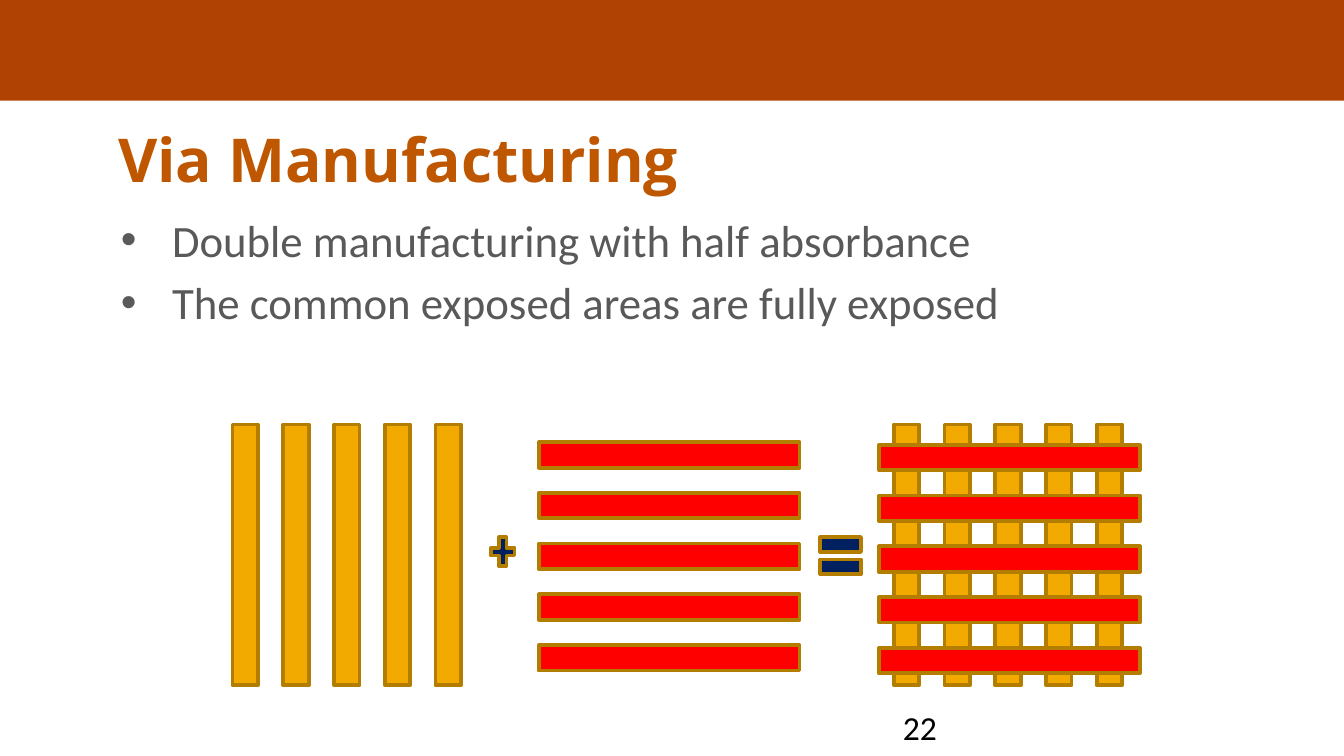
from lxml import etree
from pptx import Presentation
from pptx.dml.color import RGBColor
from pptx.enum.shapes import MSO_SHAPE
from pptx.enum.text import MSO_ANCHOR, MSO_AUTO_SIZE, PP_ALIGN
from pptx.oxml.ns import qn
from pptx.util import Inches, Pt

RECT, PLUS, EQUAL = MSO_SHAPE.RECTANGLE, MSO_SHAPE.MATH_PLUS, MSO_SHAPE.MATH_EQUAL
TOP, LEFT, NO_FIT = MSO_ANCHOR.TOP, PP_ALIGN.LEFT, MSO_AUTO_SIZE.NONE

BURNT_ORANGE, TITLE_ORANGE = "B04304", "BF5700"
GOLD, RED, NAVY, OUTLINE = "F2A900", "FF0000", "002060", "B37D00"
GREY, BULLET_GREY, BLACK = "595959", "595A5B", "000000"

BAR_COUNT, BAR_WIDTH, BAR_LENGTH = 5, 0.19, 1.94
BAR_PITCH = 1.51 / (BAR_COUNT - 1)


def color(hex_string):
    return RGBColor.from_string(hex_string)


def place(shape, left, top, width, height):
    shape.left, shape.top = Inches(left), Inches(top)
    shape.width, shape.height = Inches(width), Inches(height)


def add_bullet(paragraph, indent):
    properties = paragraph._p.get_or_add_pPr()
    properties.set("marL", str(Inches(indent)))
    properties.set("indent", str(-Inches(indent)))
    bullet_color = etree.SubElement(properties, qn("a:buClr"))
    etree.SubElement(bullet_color, qn("a:srgbClr"), val=BULLET_GREY)
    etree.SubElement(properties, qn("a:buFont"), typeface="Arial")
    etree.SubElement(properties, qn("a:buChar"), char="•")


def write_text(shape, *lines, font, size, fill, bold=False, inset=0.05,
               bullet_indent=None, gap=0):
    frame = shape.text_frame
    frame.word_wrap = True
    frame.auto_size = NO_FIT
    frame.vertical_anchor = TOP
    frame.margin_top = Inches(inset)
    for index, line in enumerate(lines):
        paragraph = frame.add_paragraph() if index else frame.paragraphs[0]
        if bullet_indent:
            add_bullet(paragraph, bullet_indent)
        paragraph.alignment = LEFT
        paragraph.space_before = Pt(gap if index else 0)
        run = paragraph.add_run()
        run.text = line
        run.font.name, run.font.size = font, Pt(size)
        run.font.bold = bold
        run.font.color.rgb = color(fill)


def add_block(slide, kind, left, top, width, height, fill, line=OUTLINE):
    block = slide.shapes.add_shape(
        kind, Inches(left), Inches(top), Inches(width), Inches(height))
    block.shadow.inherit = False
    block.fill.solid()
    block.fill.fore_color.rgb = color(fill)
    if line:
        block.line.color.rgb = color(line)
        block.line.width = Pt(2)
    else:
        block.line.fill.background()


def add_vertical_bars(slide, left, top):
    for index in range(BAR_COUNT):
        add_block(slide, RECT, left + index * BAR_PITCH, top,
                  BAR_WIDTH, BAR_LENGTH, GOLD)


def add_horizontal_bars(slide, left, top):
    for index in range(BAR_COUNT):
        add_block(slide, RECT, left, top + index * BAR_PITCH,
                  BAR_LENGTH, BAR_WIDTH, RED)


def add_exposure_equation(slide, left, top):
    """Vertical pass + horizontal pass = crossed exposure."""
    add_horizontal_bars(slide, left + 2.28, top + 0.13)
    add_vertical_bars(slide, left, top)
    # Crossed result
    add_vertical_bars(slide, left + 4.92, top)
    add_horizontal_bars(slide, left + 4.81, top + 0.15)
    # Operators
    add_block(slide, PLUS, left + 1.89, top + 0.8, 0.24, 0.29, NAVY)
    add_block(slide, EQUAL, left + 4.32, top + 0.74, 0.41, 0.47, NAVY)


def add_header(slide, left, top, width):
    add_block(slide, RECT, left, top, width, 0.76, BURNT_ORANGE, line=None)
    title = slide.shapes.title
    place(title, left + 0.78, top + 0.88, 8.47, 0.57)
    write_text(title, "Via Manufacturing", font="Open Sans", size=32.4,
               fill=TITLE_ORANGE, bold=True, inset=0.04)


def add_points(slide, left, top, width, height):
    body = slide.placeholders[1]
    place(body, left, top, width, height)
    write_text(body, "Double manufacturing with half absorbance",
               "The common exposed areas are fully exposed",
               font="Calibri", size=24, fill=GREY, inset=0.04,
               bullet_indent=0.38, gap=4.8)


def add_page_number(slide, left, top, width, height):
    number = slide.shapes.add_textbox(
        Inches(left), Inches(top), Inches(width), Inches(height))
    write_text(number, "22", font="Calibri", size=18, fill=BLACK)


def main():
    deck = Presentation()
    # Widescreen, 16:9
    deck.slide_width = Inches(10)
    deck.slide_height = deck.slide_width * 9 // 16
    slide = deck.slides.add_slide(deck.slide_layouts[1])
    add_header(slide, 0, -0.01, 10)
    add_points(slide, 0.8, 1.54, 6.75, 3.71)
    add_exposure_equation(slide, 1.73, 3.16)
    add_page_number(slide, 6.62, 5.21, 1.75, 0.3)
    deck.save("out.pptx")


if __name__ == "__main__":
    main()
